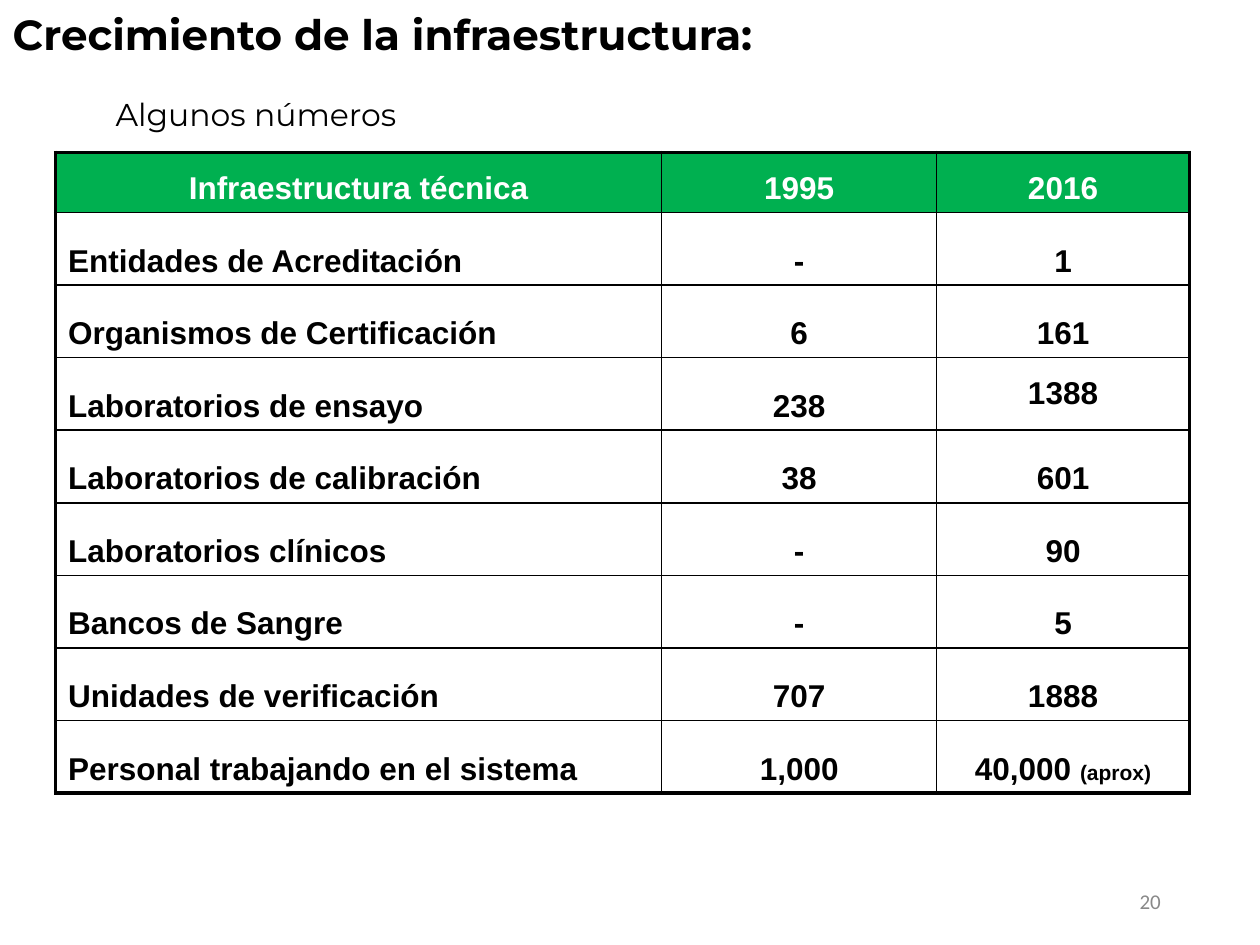
from lxml.etree import SubElement
from pptx import Presentation
from pptx.dml.color import RGBColor
from pptx.enum.text import MSO_ANCHOR, PP_ALIGN
from pptx.oxml.ns import qn
from pptx.util import Cm, Pt

TITLE = "Crecimiento de la infraestructura:"
LEAD = "Algunos números"
PAGE = "20"
HEAD = ("Infraestructura técnica", "1995", "2016")
ROWS = [
    ("Entidades de Acreditación", "-", "1"),
    ("Organismos de Certificación", "6", "161"),
    ("Laboratorios de ensayo", "238", "1388"),
    ("Laboratorios de calibración", "38", "601"),
    ("Laboratorios clínicos", "-", "90"),
    ("Bancos de Sangre", "-", "5"),
    ("Unidades de verificación", "707", "1888"),
    ("Personal trabajando en el sistema", "1,000", "40,000 |(aprox)"),
]
TIGHT = "1388"
COLORS = {"ink": "000000", "paper": "FFFFFF", "head": "00B050", "page": "898989"}
FONTS = {
    "title": {"name": "Montserrat", "size": Pt(24), "bold": True},
    "lead": {"name": "Montserrat", "size": Pt(18)},
    "page": {"name": "Calibri", "size": Pt(12)},
    "cell": {"name": "Arial", "size": Pt(18), "bold": True},
    "note": {"name": "Arial", "size": Pt(12), "bold": True},
}
WIDTHS = (12.22, 5.54, 5.1)
HEAD_H, ROW_H = 1.21, 1.46
THIN, THICK = Pt(1), Pt(2.25)


def apply(item, form):
    for key, value in form.items():
        setattr(item, key, value)


def write(par, text, font, color="ink", **form):
    apply(par, form)
    run = par.add_run()
    run.text = text
    apply(run.font, FONTS[font])
    run.font.color.rgb = RGBColor.from_string(COLORS[color])


def place(shape, left, top, width, height):
    apply(shape, dict(left=Cm(left), top=Cm(top), width=Cm(width), height=Cm(height)))


def border(cell, sides):
    props = cell._tc.get_or_add_tcPr()
    for side, width in sides.items():
        line = SubElement(props, qn("a:ln" + side), w=str(width))
        fill = SubElement(line, qn("a:solidFill"))
        SubElement(fill, qn("a:srgbClr"), val=COLORS["ink"])


def add_label(slide, box, text, font, color="ink", wrap=True, **form):
    frame = slide.shapes.add_textbox(*map(Cm, box)).text_frame
    frame.word_wrap = wrap
    write(frame.paragraphs[0], text, font, color, **form)
    return frame


def add_grid(slide):
    data = [HEAD, *ROWS]
    high = HEAD_H + ROW_H * len(ROWS)
    grid = slide.shapes.add_table(
        len(data), len(HEAD), Cm(1.12), Cm(3.07), Cm(sum(WIDTHS)), Cm(high)
    ).table
    for col, width in zip(grid.columns, WIDTHS):
        col.width = Cm(width)
    last, end = len(data) - 1, len(HEAD) - 1
    for r, texts in enumerate(data):
        top = r == 0
        grid.rows[r].height = Cm(HEAD_H if top else ROW_H)
        for c, text in enumerate(texts):
            cell = grid.cell(r, c)
            edges = {"L": c == 0, "R": c == end, "T": top, "B": r == last}
            border(cell, {side: THICK if out else THIN for side, out in edges.items()})
            cell.fill.solid()
            cell.fill.fore_color.rgb = RGBColor.from_string(COLORS["head" if top else "paper"])
            mid = c == end and not top
            cell.vertical_anchor = MSO_ANCHOR.MIDDLE if mid else MSO_ANCHOR.TOP
            par = cell.text_frame.paragraphs[0]
            par.alignment = PP_ALIGN.CENTER if top or c else PP_ALIGN.LEFT
            par.line_spacing = 1.0 if text == TIGHT else 1.35 if top else 1.7
            for part, font in zip(text.split("|"), ("cell", "note")):
                write(par, part, font, "paper" if top else "ink")


def main():
    deck = Presentation()
    apply(deck, {"slide_width": Cm(25.4), "slide_height": Cm(19.05)})
    slide = deck.slides.add_slide(deck.slide_layouts[5])
    title = slide.shapes.title
    place(title, 0, -0.3, 18, 3.18)
    apply(title.text_frame, {"vertical_anchor": MSO_ANCHOR.MIDDLE, "margin_bottom": Cm(1.22)})
    write(title.text_frame.paragraphs[0], TITLE, "title",
          alignment=PP_ALIGN.LEFT, line_spacing=0.9)
    add_grid(slide)
    page = add_label(slide, (17.93, 17.65, 5.72, 1.02), PAGE, "page", "page",
                     alignment=PP_ALIGN.RIGHT)
    page.vertical_anchor = MSO_ANCHOR.MIDDLE
    add_label(slide, (2.08, 1.8, 6.58, 1.02), LEAD, "lead", wrap=False)
    deck.save("out.pptx")


if __name__ == "__main__":
    main()
